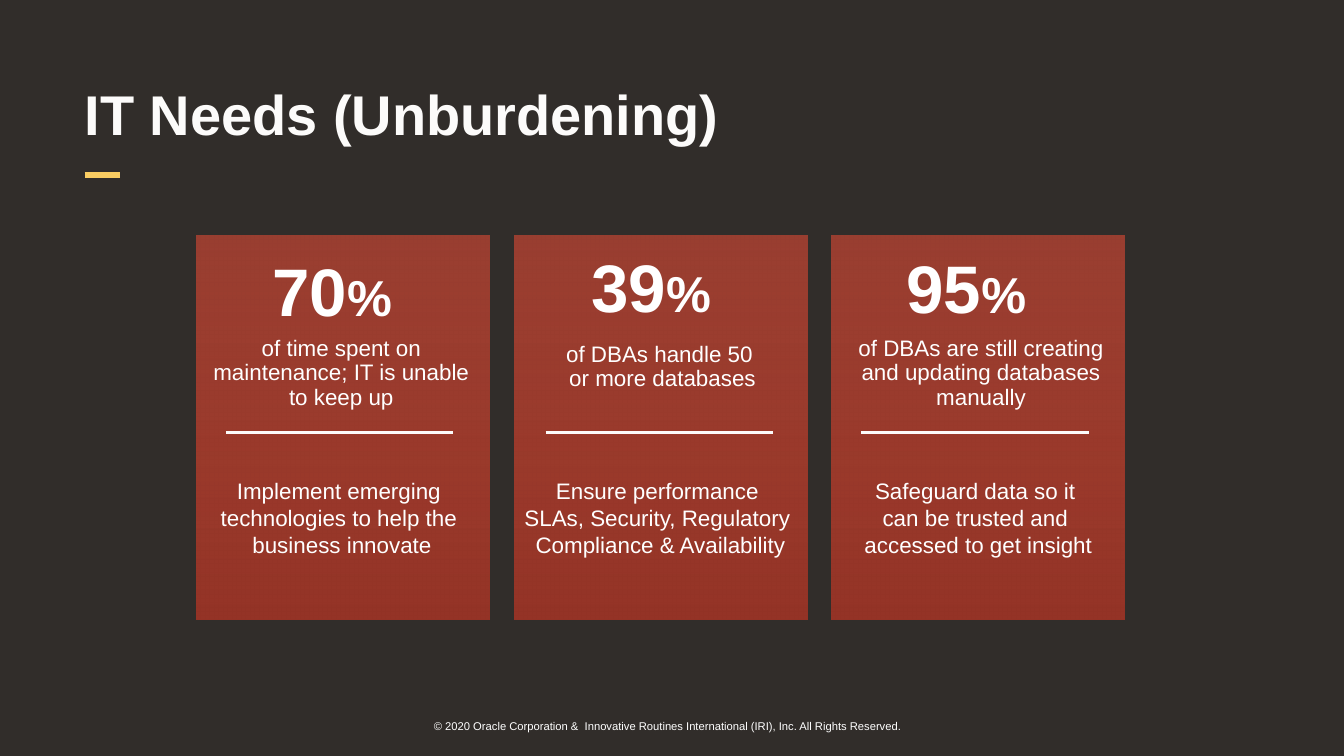
from dataclasses import dataclass

from lxml.etree import SubElement
from pptx import Presentation
from pptx.dml.color import RGBColor
from pptx.enum.shapes import MSO_CONNECTOR as CONN, MSO_SHAPE as SHAPE
from pptx.enum.text import MSO_ANCHOR as ANCHOR, MSO_AUTO_SIZE as FIT
from pptx.enum.text import PP_ALIGN as ALIGN
from pptx.oxml.ns import qn
from pptx.slide import Slide
from pptx.util import Inches, Pt

COLORS = {
    "background": "312D2A",
    "title": "FCFBFA",
    "text": "FFFFFF",
    "accent": "FACD62",
    "card_top": "C74634",
    "card_bottom": "953426",
}
FONT = "Arial"
SLIDE_W = 10
SLIDE_H = SLIDE_W * 9 / 16
CARD_LEFT, CARD_TOP, CARD_W, CARD_H = 1.46, 1.75, 2.18, 2.86
CARD_STEP = (6.19 - CARD_LEFT) / 2
RULE_TOP, RULE_W = 3.22, 1.69
GOAL_TOP, GOAL_H = 3.55, 0.61


@dataclass
class Card:
    number: str
    number_box: tuple[float, float, float, float]
    space_size: int
    fact: str
    fact_box: tuple[float, float, float, float]
    rule_left: float
    goal: str
    goal_left: float
    goal_width: float


CARDS = [
    Card("70", (1.46, 1.86, 2.18, 0.48), 41,
         "of time spent on maintenance; IT is unable to keep up",
         (1.5, 2.47, 2.08, 0.62), 1.68,
         "Implement emerging \ntechnologies to help the \nbusiness innovate",
         1.57, 1.95),
    Card("39", (3.83, 1.89, 2.17, 0.48), 36,
         "of DBAs handle 50 \nor more databases",
         (3.92, 2.51, 2.02, 0.44), 4.06,
         "Ensure performance \nSLAs, Security, Regulatory \nCompliance & Availability",
         3.83, 2.17),
    Card("95", (6.17, 1.9, 2.18, 0.47), 36,
         "of DBAs are still creating and updating databases manually",
         (6.3, 2.47, 2, 0.62), 6.41,
         "Safeguard data so it \ncan be trusted and \naccessed to get insight",
         6.19, 2.18),
]


def rgb(name: str) -> RGBColor:
    return RGBColor.from_string(COLORS[name])


def add_text(s: Slide, box: tuple[float, float, float, float],
             runs: list[tuple[str, float]], *, color: str = "text",
             bold: bool = False, align: ALIGN = ALIGN.CENTER,
             anchor: ANCHOR = ANCHOR.TOP, spacing: float = 1.0,
             inset: tuple[float, float] = (0, 0),
             fit: FIT = FIT.NONE) -> None:
    tf = s.shapes.add_textbox(*map(Inches, box)).text_frame
    tf.word_wrap = True
    tf.auto_size = fit
    tf.vertical_anchor = anchor
    tf.margin_left = tf.margin_right = Inches(inset[0])
    tf.margin_top = tf.margin_bottom = Inches(inset[1])
    p = tf.paragraphs[0]
    p.alignment = align
    p.line_spacing = spacing
    for text, size in runs:
        for i, line in enumerate(text.split("\n")):
            if i:
                p.add_line_break()
            r = p.add_run()
            r.text = line
            r.font.name = FONT
            r.font.size = Pt(size)
            r.font.bold = bold
            r.font.color.rgb = rgb(color)


def add_rule(s: Slide, left: float, top: float, width: float,
             color: str, weight: float) -> None:
    line = s.shapes.add_connector(CONN.STRAIGHT, Inches(left), Inches(top),
                                  Inches(left + width), Inches(top))
    line.line.color.rgb = rgb(color)
    line.line.width = Pt(weight)
    SubElement(line.element.spPr, qn("a:effectLst"))


def add_panel(s: Slide, left: float) -> None:
    sp = s.shapes.add_shape(SHAPE.RECTANGLE, Inches(left), Inches(CARD_TOP),
                            Inches(CARD_W), Inches(CARD_H))
    sp.shadow.inherit = False
    sp.line.fill.background()
    sp.fill.gradient()
    sp.fill.gradient_angle = 270
    stops = zip(sp.fill.gradient_stops, ("card_top", "card_bottom"), (0, 1))
    for stop, color, position in stops:
        stop.color.rgb = rgb(color)
        stop.position = position
    top_color = sp.element.spPr.find(".//" + qn("a:srgbClr"))
    SubElement(top_color, qn("a:alpha"), val="69000")


def add_card(s: Slide, card: Card, left: float) -> None:
    add_panel(s, left)
    add_text(s, card.number_box,
             [(card.number, 36), ("%", 27), (" ", card.space_size)],
             bold=True, spacing=0.9)
    add_text(s, card.fact_box, [(card.fact, 12)], spacing=0.9,
             inset=(0.07, 0.04))
    add_rule(s, card.rule_left, RULE_TOP, RULE_W, "title", 1.5)
    add_text(s, (card.goal_left, GOAL_TOP, card.goal_width, GOAL_H),
             [(card.goal, 12)])


def main() -> None:
    prs = Presentation()
    prs.slide_width, prs.slide_height = Inches(SLIDE_W), Inches(SLIDE_H)
    s = prs.slides.add_slide(prs.slide_layouts[6])
    s.background.fill.solid()
    s.background.fill.fore_color.rgb = rgb("background")

    add_rule(s, 0.63, 1.3, 0.26, "accent", 3)
    add_text(s, (3.13, 5.3, 3.75, 0.24),
             [("© 2020 Oracle Corporation &  Innovative Routines International "
               "(IRI), Inc. All Rights Reserved.", 6)],
             align=ALIGN.LEFT, inset=(0.1, 0.1), fit=FIT.SHAPE_TO_FIT_TEXT)
    add_text(s, (0.63, 0.42, 8.75, 0.68), [("IT Needs (Unburdening)", 30)],
             color="title", bold=True, align=ALIGN.LEFT,
             anchor=ANCHOR.BOTTOM, spacing=0.95)
    for i, card in enumerate(CARDS):
        add_card(s, card, CARD_LEFT + i * CARD_STEP)
    prs.save("out.pptx")


if __name__ == "__main__":
    main()
